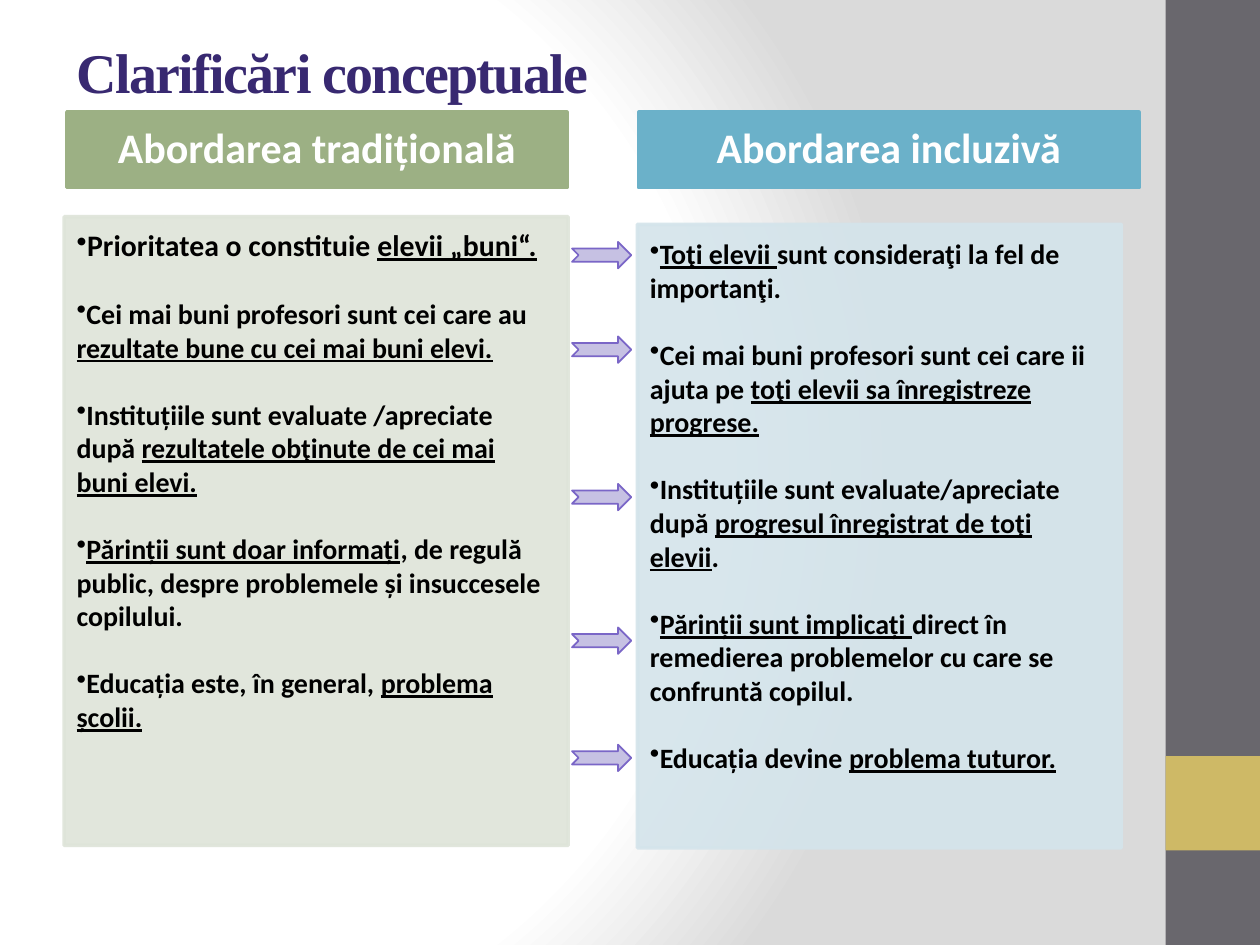
from lxml.etree import SubElement
from pptx import Presentation
from pptx.dml.color import RGBColor
from pptx.enum.shapes import MSO_SHAPE as Shape
from pptx.enum.text import MSO_ANCHOR as Anchor, PP_ALIGN as Align
from pptx.oxml import parse_xml
from pptx.oxml.ns import nsdecls, qn
from pptx.util import Inches, Pt

WHITE = RGBColor(0xFF, 0xFF, 0xFF)
BLACK = RGBColor(0, 0, 0)
SLATE = RGBColor(0x69, 0x67, 0x6D)
GOLD = RGBColor(0xCE, 0xB9, 0x66)
INDIGO = RGBColor(0x38, 0x29, 0x71)
GREEN = RGBColor(0x9C, 0xB0, 0x84)
PALE_GREEN = RGBColor(0xDE, 0xE4, 0xD9)
BLUE = RGBColor(0x6B, 0xB1, 0xC9)
PALE_BLUE = RGBColor(0xD4, 0xE4, 0xEB)
LILAC = RGBColor(0xC6, 0xC1, 0xE3)
VIOLET = RGBColor(0x7A, 0x66, 0xC7)

LINE_PITCH = Pt(19.2)
ARROW_TOPS = (1.92, 2.67, 3.84, 4.98, 5.91)

# Each point is a list of (text, underlined) pieces.
TRADITIONAL = [
    [("Prioritatea o constituie ", False), ("elevii „buni“.", True)],
    [("Cei mai buni profesori sunt cei care au ", False),
     ("rezultate bune cu cei mai buni elevi.", True)],
    [("Instituțiile sunt evaluate /apreciate după ", False),
     ("rezultatele obţinute de cei mai buni elevi.", True)],
    [("Părinții sunt doar informați", True),
     (", de regulă public, despre problemele și insuccesele copilului.", False)],
    [("Educația este, în general, ", False), ("problema școlii.", True)],
]
INCLUSIVE = [
    [("Toţi elevii ", True), ("sunt consideraţi la fel de importanţi.", False)],
    [("Cei mai buni profesori sunt cei care ii ajuta pe ", False),
     ("toţi elevii sa înregistreze progrese.", True)],
    [("Instituțiile sunt evaluate/apreciate după ", False),
     ("progresul înregistrat de toţi elevii", True), (".", False)],
    [("Părinții sunt implicați ", True),
     ("direct în remedierea problemelor cu care se confruntă copilul.", False)],
    [("Educația devine ", False), ("problema tuturor.", True)],
]


def add_block(page, kind, box, fill, line=None, width=2):
    block = page.shapes.add_shape(kind, *map(Inches, box))
    block.shadow.inherit = False
    block.fill.solid()
    block.fill.fore_color.rgb = fill
    if line is None:
        block.line.fill.background()
    else:
        block.line.color.rgb = line
        block.line.width = Pt(width)
    return block


def set_margins(frame, *margins):
    (frame.margin_left, frame.margin_top,
     frame.margin_right, frame.margin_bottom) = map(Inches, margins)


def style_run(run, size, color, name="Calibri"):
    run.font.name = name
    run.font.size = Pt(size)
    run.font.bold = True
    run.font.color.rgb = color


def paint_background(page):
    background = parse_xml(
        f'<p:bg {nsdecls("p", "a")}><p:bgPr><a:gradFill rotWithShape="1"><a:gsLst>'
        '<a:gs pos="0"><a:srgbClr val="FFFFFF"/></a:gs>'
        '<a:gs pos="75000"><a:srgbClr val="FFFFFF"/></a:gs>'
        '<a:gs pos="100000"><a:srgbClr val="DADADA"/></a:gs></a:gsLst>'
        '<a:path path="circle"><a:fillToRect l="20000" t="50000" r="100000" b="50000"/>'
        '</a:path></a:gradFill><a:effectLst/></p:bgPr></p:bg>')
    page.element.cSld.insert(0, background)


def add_sidebar(page, box):
    left, top, width, height = box
    add_block(page, Shape.RECTANGLE, box, SLATE)
    add_block(page, Shape.RECTANGLE, (left, top + 0.8 * height, width, width), GOLD)


def set_title(page, box):
    title = page.shapes.title
    title.left, title.top, title.width, title.height = map(Inches, box)
    frame = title.text_frame
    frame.text = "Clarificări conceptuale"
    frame.vertical_anchor = Anchor.MIDDLE
    para = frame.paragraphs[0]
    para.alignment = Align.LEFT
    run = para.runs[0]
    style_run(run, 32, INDIGO, "Times New Roman")
    run.font._element.set("spc", "-100")


def add_heading(page, box, text, color):
    frame = add_block(page, Shape.RECTANGLE, box, color, color).text_frame
    set_margins(frame, 0.19, 0.11, 0.19, 0.11)
    frame.word_wrap = True
    frame.vertical_anchor = Anchor.MIDDLE
    frame.text = text
    para = frame.paragraphs[0]
    para.alignment = Align.CENTER
    para.line_spacing = 0.9
    style_run(para.runs[0], 24, WHITE)


def add_points(page, box, points, color, first_size=16):
    panel = add_block(page, Shape.RECTANGLE, box, color, color)
    for shade in panel._element.spPr.iter(qn("a:srgbClr")):
        SubElement(shade, qn("a:alpha"), val="90000")
    frame = panel.text_frame
    set_margins(frame, 0.1, 0.1, 0.13, 0.15)
    frame.word_wrap = True
    frame.vertical_anchor = Anchor.TOP
    for index, pieces in enumerate(points):
        para = frame.add_paragraph() if index else frame.paragraphs[0]
        para.alignment = Align.LEFT
        para.line_spacing = para.space_after = LINE_PITCH
        properties = para._p.get_or_add_pPr()
        properties.set("marL", "0")
        properties.set("indent", "0")
        SubElement(properties, qn("a:buChar"), char="•")
        for text, underlined in pieces:
            run = para.add_run()
            run.text = text
            style_run(run, 16 if index else first_size, BLACK)
            run.font.underline = underlined


def add_arrows(page, left, tops):
    for top in tops:
        add_block(page, Shape.NOTCHED_RIGHT_ARROW, (left, top, 0.47, 0.21),
                  LILAC, VIOLET, 1)


def main():
    deck = Presentation()
    deck.slide_width, deck.slide_height = Inches(10), Inches(7.5)
    page = deck.slides.add_slide(deck.slide_layouts[5])
    paint_background(page)
    add_sidebar(page, (9.25, 0, 0.75, 7.5))
    set_title(page, (0.51, 0.21, 8.43, 0.71))
    add_heading(page, (0.53, 0.89, 3.97, 0.6), "Abordarea tradițională", GREEN)
    add_points(page, (0.51, 1.72, 4, 4.99), TRADITIONAL, PALE_GREEN, 17)
    add_heading(page, (5.07, 0.89, 3.97, 0.6), "Abordarea incluzivă", BLUE)
    add_points(page, (5.06, 1.78, 3.84, 4.95), INCLUSIVE, PALE_BLUE)
    add_arrows(page, 4.54, ARROW_TOPS)
    deck.save("out.pptx")


if __name__ == "__main__":
    main()
